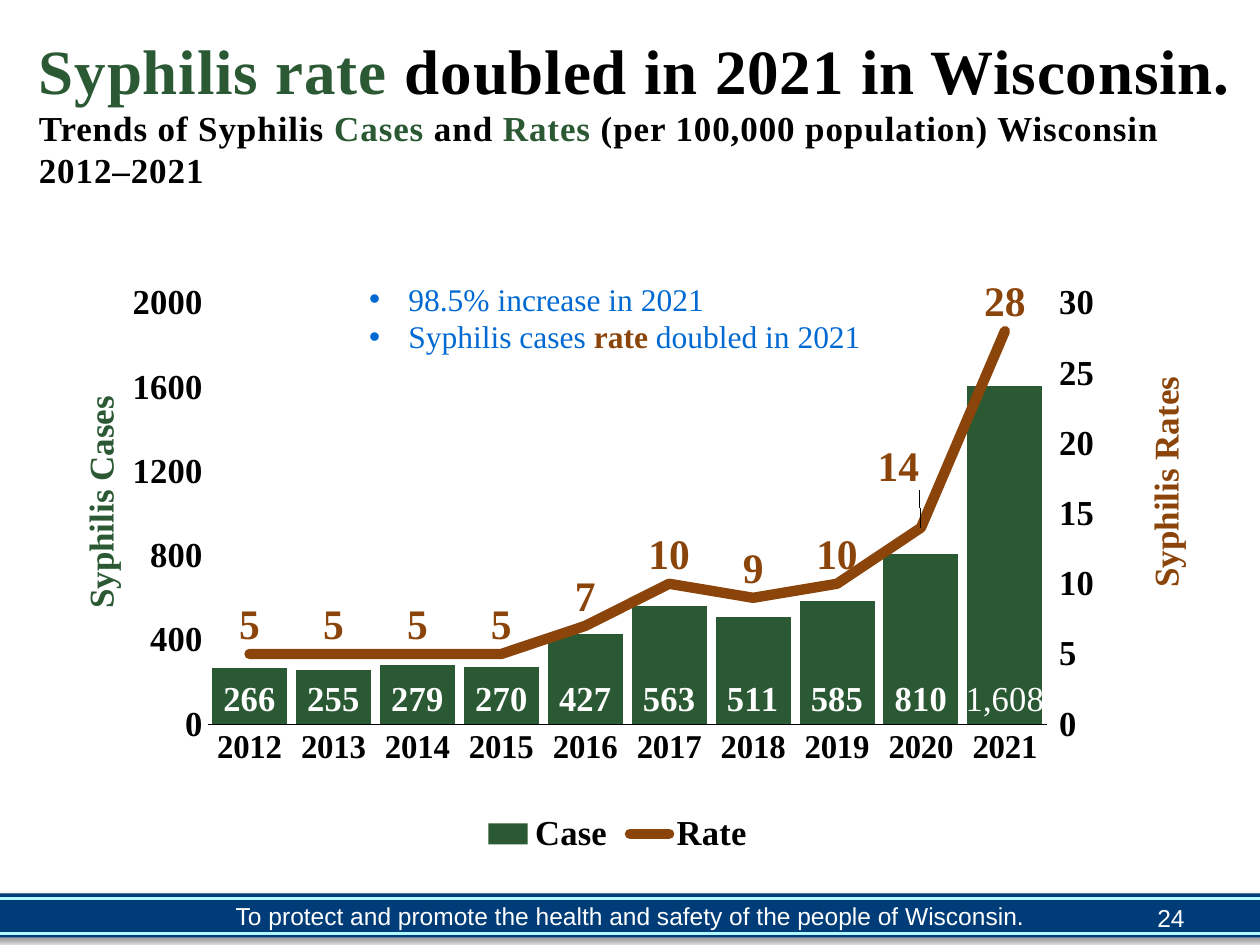
from dataclasses import dataclass

import pptx
import pptx.chart.axis
import pptx.chart.data
import pptx.dml.color
import pptx.enum.chart
import pptx.enum.shapes
import pptx.enum.text
import pptx.oxml
import pptx.oxml.ns
import pptx.util
from lxml import etree

Pt = pptx.util.Pt
qn = pptx.oxml.ns.qn
LabelPosition = pptx.enum.chart.XL_LABEL_POSITION
TickMark = pptx.enum.chart.XL_TICK_MARK
Align = pptx.enum.text.PP_ALIGN

SERIF, SANS = "Times New Roman", "Arial"
GREEN, BROWN, BLUE = "2A5934", "8B450B", "0069D2"
NAVY, CYAN, BLACK, WHITE = "003D78", "B0FAFF", "000000", "FFFFFF"

YEARS = [str(year) for year in range(2012, 2022)]
CASES = [266, 255, 279, 270, 427, 563, 511, 585, 810, 1608]
RATES = [5, 5, 5, 5, 7, 10, 9, 10, 14, 28]


@dataclass
class Box:
    left: float
    top: float
    width: float
    height: float

    def lengths(self):
        return [Pt(value) for value in (self.left, self.top, self.width, self.height)]


@dataclass
class Piece:
    text: str
    size: float
    color: str
    bold: bool = False
    font: str = SERIF
    spacing: int = 0
    break_after: bool = False


@dataclass
class ValueScale:
    title: str
    color: str
    maximum: float
    step: float
    title_x: float
    title_y: float
    tick: int


def rgb(color: str):
    return pptx.dml.color.RGBColor.from_string(color)


def set_font(font, size: float, color: str, bold: bool = True, name: str = SERIF):
    font.size, font.bold, font.name = Pt(size), bold, name
    font.color.rgb = rgb(color)


def add_text(slide, box: Box, paragraphs, align=Align.LEFT, middle=True, wrap=True):
    frame = slide.shapes.add_textbox(*box.lengths()).text_frame
    frame.word_wrap = wrap
    if middle:
        frame.vertical_anchor = pptx.enum.text.MSO_ANCHOR.MIDDLE
    for index, pieces in enumerate(paragraphs):
        paragraph = frame.add_paragraph() if index else frame.paragraphs[0]
        paragraph.alignment = align
        for piece in pieces:
            run = paragraph.add_run()
            run.text = piece.text
            set_font(run.font, piece.size, piece.color, piece.bold, piece.font)
            if piece.spacing:
                run._r.get_or_add_rPr().set("spc", str(piece.spacing))
            if piece.break_after:
                paragraph.add_line_break()
    return frame


def add_bullet(paragraph, indent: float):
    properties = paragraph._p.get_or_add_pPr()
    properties.set("marL", str(Pt(indent)))
    properties.set("indent", str(-Pt(indent)))
    etree.SubElement(properties, qn("a:buFont"), typeface=SANS)
    etree.SubElement(properties, qn("a:buChar"), char="•")


def add_footer(slide):
    bar = slide.shapes.add_shape(pptx.enum.shapes.MSO_SHAPE.RECTANGLE,
                                 *Box(-7.2, 510.5, 734.4, 25.2).lengths())
    bar.fill.solid()
    bar.fill.fore_color.rgb = rgb(NAVY)
    bar.line.fill.background()
    bar.shadow.inherit = False
    shadow = etree.SubElement(bar._element.spPr.find(qn("a:effectLst")), qn("a:outerShdw"),
                              blurRad=str(Pt(4)), dist=str(Pt(3)), dir="2700000")
    shade = etree.SubElement(shadow, qn("a:srgbClr"), val=BLACK)
    etree.SubElement(shade, qn("a:alpha"), val="40000")
    add_text(slide, Box(-5.8, 516.2, 732.2, 14.4),
             [[Piece("To protect and promote the health and safety of the people of Wisconsin.",
                     14, WHITE, font=SANS)]], Align.CENTER)
    for y in (513.4, 533.5):
        stripe = slide.shapes.add_connector(pptx.enum.shapes.MSO_CONNECTOR.STRAIGHT,
                                            Pt(-7.2), Pt(y), Pt(727.2), Pt(y))
        stripe.line.color.rgb = rgb(CYAN)
        stripe.line.width = Pt(1.5)
        etree.SubElement(stripe._element.spPr, qn("a:effectLst"))
    add_text(slide, Box(516.2, 509.8, 167.8, 28.8),
             [[Piece("24", 14, WHITE, font=SANS)]], Align.RIGHT)


def chart_xml(body: str):
    namespaces = pptx.oxml.ns.nsdecls("c")
    return pptx.oxml.parse_xml(body.replace(">", f" {namespaces}>", 1))


def place(parent, index: int, values: dict):
    """Give a chart part a manual layout, as fractions of the chart."""
    for old in parent.findall(qn("c:layout")):
        parent.remove(old)
    settings = "".join(f'<c:{name} val="{value}"/>' for name, value in values.items())
    parent.insert(index, chart_xml(
        f"<c:layout><c:manualLayout>{settings}</c:manualLayout></c:layout>"))


def move_rate_to_line(chart):
    """Put the second series on a line plot; return the left and right value axes."""
    left_axis = chart.value_axis
    bars = chart.plots[0]._element
    rate = bars.findall(qn("c:ser"))[1]
    for flag in rate.findall(qn("c:invertIfNegative")):
        rate.remove(flag)
    line = chart_xml('<c:lineChart><c:grouping val="standard"/><c:varyColors val="0"/>'
                     '<c:marker val="1"/><c:axId val="501"/><c:axId val="502"/></c:lineChart>')
    line.insert(2, rate)
    bars.addnext(line)
    right = chart_xml(
        '<c:valAx><c:axId val="502"/><c:scaling/><c:delete val="0"/><c:axPos val="r"/>'
        '<c:numFmt formatCode="General" sourceLinked="0"/><c:majorTickMark val="out"/>'
        '<c:minorTickMark val="none"/><c:tickLblPos val="nextTo"/>'
        '<c:crossAx val="501"/><c:crosses val="max"/></c:valAx>')
    hidden = chart_xml(
        '<c:catAx><c:axId val="501"/><c:scaling/><c:delete val="1"/><c:axPos val="b"/>'
        '<c:crossAx val="502"/><c:crosses val="autoZero"/></c:catAx>')
    left_axis._element.addnext(right)
    right.addnext(hidden)
    return left_axis, pptx.chart.axis.ValueAxis(right)


def style_value_axis(axis, scale: ValueScale):
    axis.minimum_scale, axis.maximum_scale = 0, scale.maximum
    axis.major_unit = scale.step
    axis.major_tick_mark = scale.tick
    axis.format.line.fill.background()
    set_font(axis.tick_labels.font, 20, BLACK)
    frame = axis.axis_title.text_frame
    frame.text = scale.title
    set_font(frame.paragraphs[0].runs[0].font, 20, scale.color)
    body = frame._txBody.find(qn("a:bodyPr"))
    body.set("rot", "-5400000")
    body.set("vert", "horz")
    place(axis.axis_title._element, 1,
          dict(xMode="edge", yMode="edge", x=scale.title_x, y=scale.title_y))


def style_labels(series, position, size: float, color: str):
    labels = series.data_labels
    labels.show_value = True
    labels.position = position
    set_font(labels.font, size, color)


def add_trend_chart(slide):
    data = pptx.chart.data.CategoryChartData()
    data.categories = YEARS
    data.add_series("Case", CASES)
    data.add_series("Rate", RATES)
    chart = slide.shapes.add_chart(pptx.enum.chart.XL_CHART_TYPE.COLUMN_CLUSTERED,
                                   *Box(30.2, 126, 653.8, 365.8).lengths(), data).chart
    set_font(chart.font, 14, BLACK)
    chart.has_title = False
    left_axis, right_axis = move_rate_to_line(chart)
    place(chart._chartSpace.chart.plotArea, 0,
          dict(layoutTarget="inner", xMode="edge", yMode="edge",
               x=0.137, y=0.129, w=0.743, h=0.658))

    # Axes and legend
    style_value_axis(left_axis, ValueScale(
        "Syphilis Cases", GREEN, 2000, 400, 0.017, 0.26, TickMark.NONE))
    style_value_axis(right_axis, ValueScale(
        "Syphilis Rates", BROWN, 30, 5, 0.96, 0.23, TickMark.OUTSIDE))
    grid = left_axis.major_gridlines.format.line
    grid.color.rgb, grid.width = rgb(WHITE), Pt(0.75)
    years = chart.category_axis
    years.major_tick_mark = TickMark.NONE
    years.format.line.color.rgb, years.format.line.width = rgb(BLACK), Pt(0.75)
    set_font(years.tick_labels.font, 19, BLACK)
    chart.has_legend = True
    chart.legend.position = pptx.enum.chart.XL_LEGEND_POSITION.BOTTOM
    chart.legend.include_in_layout = False
    set_font(chart.legend.font, 20, BLACK)

    # Case columns
    columns, lines = chart.plots
    columns.gap_width, columns.vary_by_categories = 12, False
    cases = columns.series[0]
    cases.format.fill.solid()
    cases.format.fill.fore_color.rgb = rgb(GREEN)
    style_labels(cases, LabelPosition.INSIDE_BASE, 20, WHITE)
    last_label = cases.points[9].data_label
    last_label.text_frame.text = "1,608"
    set_font(last_label.text_frame.paragraphs[0].runs[0].font, 20, WHITE, False)
    last_label.position = LabelPosition.INSIDE_BASE

    # Rate line, with the 2020 label moved aside and no leader line
    rates = lines.series[0]
    rates.smooth = False
    rates.marker.style = pptx.enum.chart.XL_MARKER_STYLE.NONE
    rates.format.line.color.rgb, rates.format.line.width = rgb(BROWN), Pt(6)
    rates._element.find(qn("c:spPr")).find(qn("a:ln")).set("cap", "rnd")
    style_labels(rates, LabelPosition.ABOVE, 24, BROWN)
    shifted = rates.points[8].data_label
    set_font(shifted.font, 24, BROWN)
    shifted.position = LabelPosition.ABOVE
    for label in rates._element.iter(qn("c:dLbl")):
        place(label, 1, dict(x=-0.02, y=-0.05))
    rates._element.find(qn("c:dLbls")).append(chart_xml(
        '<c:extLst><c:ext uri="{CE6537A1-D6FC-4f65-9D91-7224C49458BB}" '
        'xmlns:c15="http://schemas.microsoft.com/office/drawing/2012/chart">'
        '<c15:showLeaderLines val="0"/></c:ext></c:extLst>'))


def main():
    presentation = pptx.Presentation()
    presentation.slide_width, presentation.slide_height = Pt(720), Pt(540)
    slide = presentation.slides.add_slide(presentation.slide_layouts[6])
    add_footer(slide)

    # Title and subtitle
    heading = [("Syphilis rate ", 36, GREEN), ("doubled in 2021 in Wisconsin.", 36, BLACK),
               ("Trends of Syphilis ", 20, BLACK), ("Cases", 20, GREEN), (" and ", 20, BLACK),
               ("Rates", 20, GREEN), (" (per 100,000 population) Wisconsin 2012–2021", 20, BLACK)]
    add_text(slide, Box(15.1, 25.2, 704.9, 76.3),
             [[Piece(text, size, color, True, spacing=50, break_after=text.endswith("."))
               for text, size, color in heading]])

    add_trend_chart(slide)

    # Key findings
    findings = add_text(slide, Box(203.8, 156.2, 298.1, 51.1), [
        [Piece("98.5% increase in 2021", 18, BLUE)],
        [Piece("Syphilis cases ", 18, BLUE), Piece("rate", 18, BROWN, True),
         Piece(" doubled in 2021", 18, BLUE)]], middle=False, wrap=False)
    for paragraph in findings.paragraphs:
        add_bullet(paragraph, 22.5)
    presentation.save("out.pptx")


if __name__ == "__main__":
    main()
